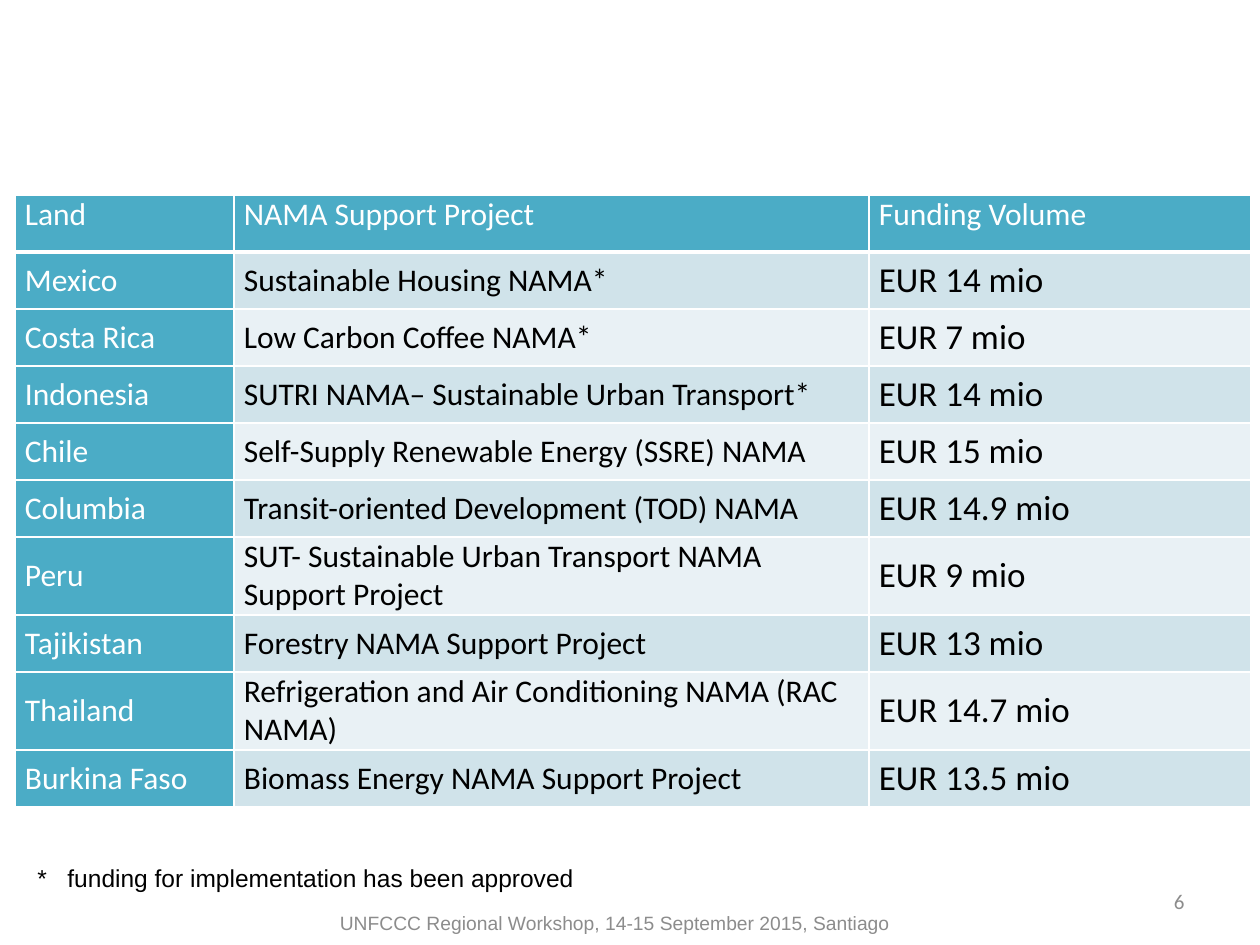
from dataclasses import dataclass

from lxml import etree
from pptx import Presentation
from pptx import util as u
from pptx.dml.color import RGBColor
from pptx.enum import text
from pptx.oxml import ns

PX = 914400 / 126


@dataclass(frozen=True)
class Theme:
    teal: str = "4BACC6"
    bands: tuple = ("D0E3EA", "E9F1F5")
    white: str = "FFFFFF"
    black: str = "000000"
    grey: str = "8C8C8C"
    body: str = "Calibri"
    plain: str = "Arial"
    label_size: int = 18
    amount_size: int = 20
    note_size: int = 14
    number_size: int = 12
    footer_size: int = 11


theme = Theme()


def px(count):
    return u.Emu(round(count * PX))


def add_run(para, words, size, font, color, align):
    para.alignment = align
    span = para.add_run()
    span.text = words
    span.font.size = u.Pt(size)
    span.font.name = font
    span.font.color.rgb = RGBColor.from_string(color)


deck = Presentation()
deck.slide_width, deck.slide_height = px(1260), px(945)
page = deck.slides.add_slide(deck.slide_layouts[6])

LEFT, JUSTIFY = text.PP_ALIGN.LEFT, text.PP_ALIGN.JUSTIFY
CENTER, RIGHT = text.PP_ALIGN.CENTER, text.PP_ALIGN.RIGHT
TOP, MIDDLE = text.MSO_ANCHOR.TOP, text.MSO_ANCHOR.MIDDLE

projects = [
    ("Land", "NAMA Support Project", "Funding Volume"),
    ("Mexico", "Sustainable Housing NAMA*", "EUR 14 mio"),
    ("Costa Rica", "Low Carbon Coffee NAMA*", "EUR 7 mio"),
    ("Indonesia", "SUTRI NAMA– Sustainable Urban Transport*", "EUR 14 mio"),
    ("Chile", "Self-Supply Renewable Energy (SSRE) NAMA", "EUR 15 mio"),
    ("Columbia", "Transit-oriented Development (TOD) NAMA", "EUR 14.9 mio"),
    ("Peru", "SUT- Sustainable Urban Transport NAMA Support Project", "EUR 9 mio"),
    ("Tajikistan", "Forestry NAMA Support Project", "EUR 13 mio"),
    ("Thailand", "Refrigeration and Air Conditioning NAMA (RAC NAMA)", "EUR 14.7 mio"),
    ("Burkina Faso", "Biomass Energy NAMA Support Project", "EUR 13.5 mio"),
]
column_widths = [219, 635, 382]
row_heights = [78 if land in ("Peru", "Thailand") else 57 for land, _, _ in projects]

frame = page.shapes.add_table(
    len(projects), len(column_widths), px(15), px(195),
    px(sum(column_widths)), px(sum(row_heights)))
table = frame.table
for column, width in zip(table.columns, column_widths):
    column.width = px(width)

for row, (project, height) in enumerate(zip(projects, row_heights)):
    table.rows[row].height = px(height)
    for col, words in enumerate(project):
        cell = table.cell(row, col)
        header = row == 0
        colored = header or col == 0
        cell.margin_left = cell.margin_right = px(10)
        cell.margin_top = cell.margin_bottom = 0
        cell.vertical_anchor = TOP if header else MIDDLE

        properties = cell._tc.get_or_add_tcPr()
        for side in ("lnL", "lnR", "lnT", "lnB"):
            weight = 3 if header and side == "lnB" else 1
            line = etree.SubElement(properties, ns.qn(f"a:{side}"), w=str(u.Pt(weight)))
            paint = etree.SubElement(line, ns.qn("a:solidFill"))
            etree.SubElement(paint, ns.qn("a:srgbClr"), val=theme.white)

        cell.fill.solid()
        cell.fill.fore_color.rgb = RGBColor.from_string(
            theme.teal if colored else theme.bands[(row - 1) % 2])
        amount = col == 2 and not header
        left_aligned = (col == 2) if header else (col == 1)
        add_run(cell.text_frame.paragraphs[0], words,
                theme.amount_size if amount else theme.label_size, theme.body,
                theme.white if colored else theme.black,
                LEFT if left_aligned else JUSTIFY)

captions = [
    ((903, 876, 294, 50), "6", theme.number_size, theme.body, theme.grey, RIGHT, MIDDLE),
    ((25, 857, 714, 43), "*\tfunding for implementation has been approved",
     theme.note_size, theme.plain, theme.black, LEFT, TOP),
    ((273, 898, 684, 50), "UNFCCC Regional Workshop, 14-15 September 2015, Santiago",
     theme.footer_size, theme.plain, theme.grey, CENTER, MIDDLE),
]
for place, words, size, font, color, align, anchor in captions:
    box = page.shapes.add_textbox(*map(px, place))
    box.text_frame.word_wrap = True
    box.text_frame.vertical_anchor = anchor
    para = box.text_frame.paragraphs[0]
    if "\t" in words:
        indent = para._p.get_or_add_pPr()
        indent.set("marL", str(px(30)))
        indent.set("indent", str(-px(30)))
    add_run(para, words, size, font, color, align)

deck.save("out.pptx")
